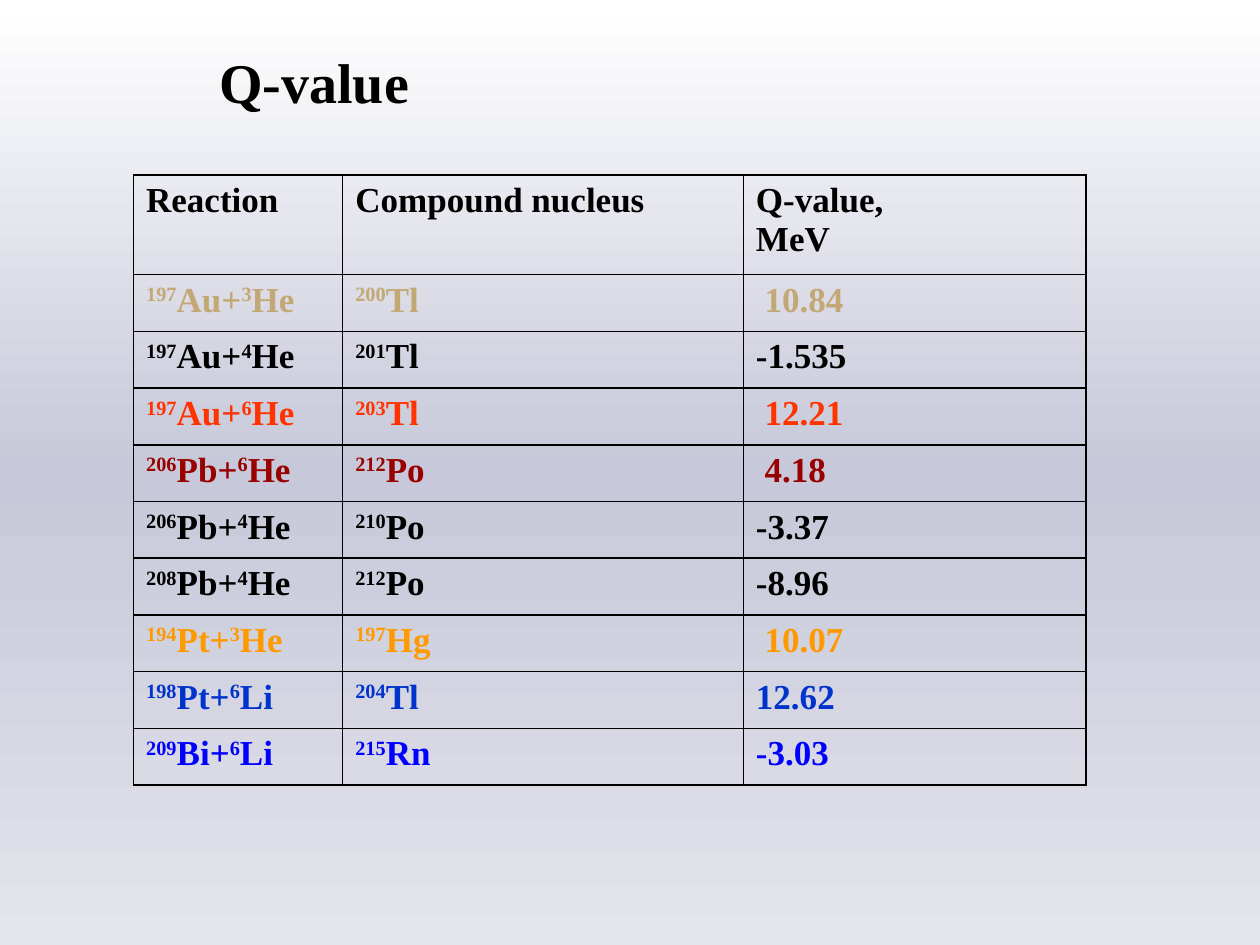
from copy import deepcopy
from itertools import groupby

from pptx import Presentation
from pptx.dml.color import RGBColor
from pptx.enum.text import MSO_ANCHOR
from pptx.oxml import parse_xml
from pptx.oxml.ns import nsdecls
from pptx.util import Inches, Pt

FONT = "Times New Roman"
COLORS = {
    "black": "000000", "tan": "C2A874", "red": "FF3300", "maroon": "990000",
    "orange": "FF9900", "navy": "0033CC", "blue": "0000FF",
    "bg_top": "FFFFFF", "bg_middle": "C7C8D9", "bg_bottom": "E4E4EC",
}
HEADERS = ["Reaction", "Compound nucleus", "Q-value,\nMeV"]
REACTIONS = [
    ("197Au+3He", "200Tl", " 10.84", "tan"),
    ("197Au+4He", "201Tl", "-1.535", "black"),
    ("197Au+6He", "203Tl", " 12.21", "red"),
    ("206Pb+6He", "212Po", " 4.18", "maroon"),
    ("206Pb+4He", "210Po", "-3.37", "black"),
    ("208Pb+4He", "212Po", "-8.96", "black"),
    ("194Pt+3He", "197Hg", " 10.07", "orange"),
    ("198Pt+6Li", "204Tl", "12.62", "navy"),
    ("209Bi+6Li", "215Rn", "-3.03", "blue"),
]
COL_WIDTHS = [1.66, 3.18, 2.72]
HEADER_HEIGHT, ROW_HEIGHT = 0.79, 0.45


def write(tf, text, size=20, color="black", bold=True, isotopes=False):
    """Fill a text frame; with isotopes, mass numbers are superscript."""
    for i, line in enumerate(text.split("\n")):
        p = tf.paragraphs[0] if i == 0 else tf.add_paragraph()
        for digits, chars in groupby(line, lambda c: isotopes and c.isdigit()):
            r = p.add_run()
            r.text = "".join(chars)
            r.font.name, r.font.size, r.font.bold = FONT, Pt(size), bold
            r.font.color.rgb = RGBColor.from_string(COLORS[color])
            if digits:
                r._r.get_or_add_rPr().set("baseline", "30000")


def set_background(s):
    fill = s.background.fill
    fill.gradient()
    fill.gradient_angle = 270
    gs_list = fill.gradient_stops[0]._gs.getparent()
    gs_list.append(deepcopy(gs_list[-1]))
    names = ["bg_top", "bg_middle", "bg_bottom"]
    for stop, position, name in zip(fill.gradient_stops, [0, 0.5, 1], names):
        stop.position = position
        stop.color.rgb = RGBColor.from_string(COLORS[name])


def set_borders(cell):
    tc_pr = cell._tc.get_or_add_tcPr()
    for i, side in enumerate(["lnL", "lnR", "lnT", "lnB"]):
        tc_pr.insert(i, parse_xml(
            f'<a:{side} {nsdecls("a")} w="{Pt(1)}"><a:solidFill>'
            f'<a:srgbClr val="{COLORS["black"]}"/></a:solidFill></a:{side}>'))


def add_title(s, text):
    tf = s.shapes.add_textbox(
        Inches(1.53), Inches(0.28), Inches(1.86), Inches(0.93)).text_frame
    tf.word_wrap = False
    tf.vertical_anchor = MSO_ANCHOR.TOP
    tf.margin_left, tf.margin_top = Inches(0.21), Inches(0.1)
    write(tf, text, size=32)


def add_reaction_table(s):
    n_rows = len(REACTIONS) + 1
    height = HEADER_HEIGHT + ROW_HEIGHT * len(REACTIONS)
    table = s.shapes.add_table(
        n_rows, len(HEADERS), Inches(1.06), Inches(1.39),
        Inches(sum(COL_WIDTHS)), Inches(height)).table
    table.horz_banding = False
    for col, width in zip(table.columns, COL_WIDTHS):
        col.width = Inches(width)
    for i, row in enumerate(table.rows):
        row.height = Inches(ROW_HEIGHT if i else HEADER_HEIGHT)

    rows = [(*HEADERS, "black"), *REACTIONS]
    for i, (*texts, color) in enumerate(rows):
        for j, text in enumerate(texts):
            cell = table.cell(i, j)
            cell.fill.background()
            set_borders(cell)
            write(cell.text_frame, text, color=color, isotopes=j < 2)


def main():
    prs = Presentation()
    prs.slide_width, prs.slide_height = Inches(10), Inches(7.5)
    s = prs.slides.add_slide(prs.slide_layouts[6])
    set_background(s)
    add_title(s, "Q-value")
    add_reaction_table(s)
    prs.save("out.pptx")


if __name__ == "__main__":
    main()
